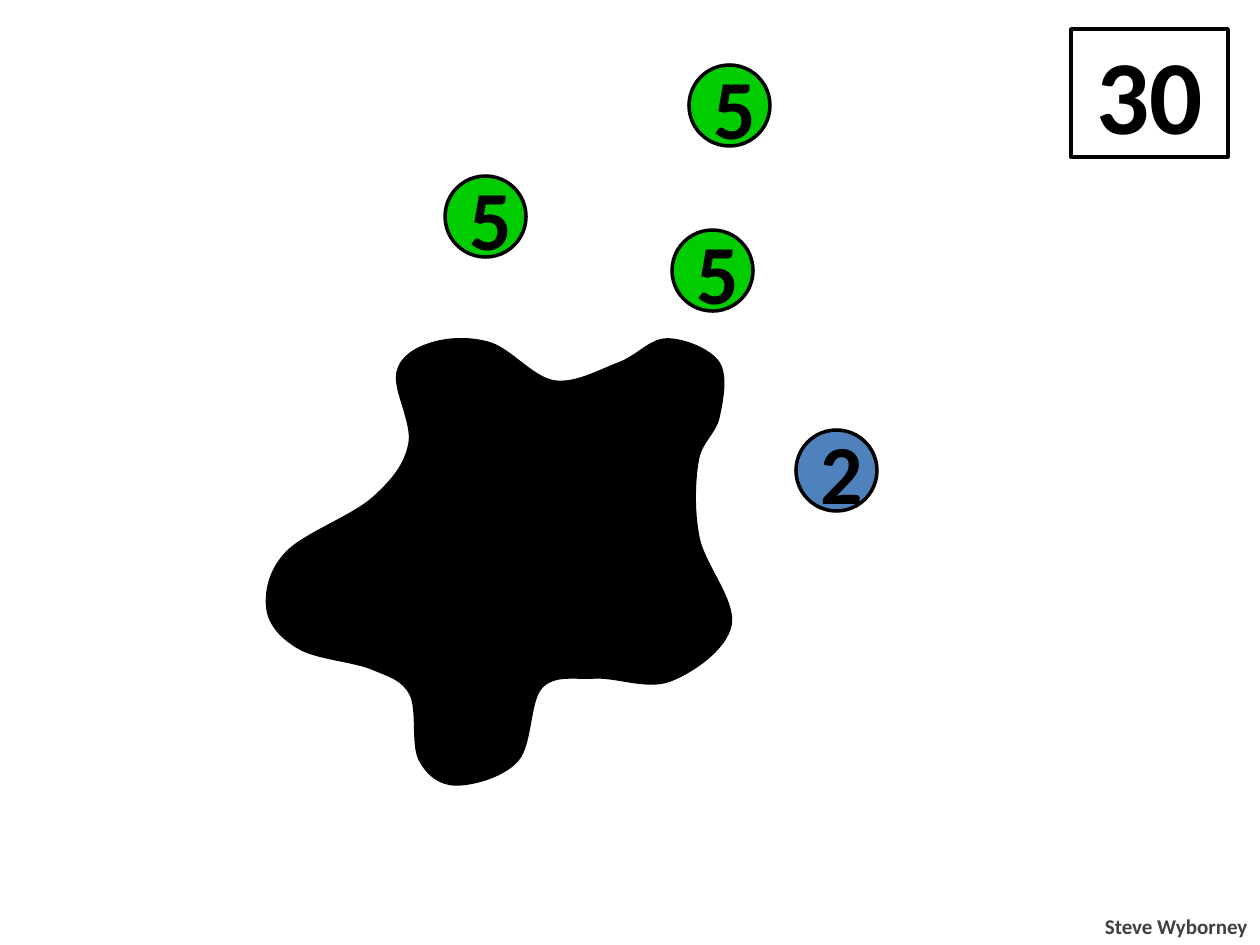
from typing import NamedTuple

from lxml import etree
from pptx import Presentation
from pptx.dml.color import RGBColor
from pptx.enum.shapes import MSO_SHAPE
from pptx.enum.text import MSO_ANCHOR, MSO_AUTO_SIZE, PP_ALIGN
from pptx.oxml.ns import qn
from pptx.util import Pt

RECT, OVAL = MSO_SHAPE.RECTANGLE, MSO_SHAPE.OVAL
CENTER, RIGHT = PP_ALIGN.CENTER, PP_ALIGN.RIGHT
TOP, MIDDLE = MSO_ANCHOR.TOP, MSO_ANCHOR.MIDDLE
FIT, FIXED = MSO_AUTO_SIZE.SHAPE_TO_FIT_TEXT, MSO_AUTO_SIZE.NONE

BLACK = RGBColor(0x00, 0x00, 0x00)
WHITE = RGBColor(0xFF, 0xFF, 0xFF)
GRAY = RGBColor(0x40, 0x40, 0x40)
GREEN = RGBColor(0x00, 0xCC, 0x00)
BLUE = RGBColor(0x4F, 0x81, 0xBD)

FONT = "Calibri"
SCALE = 914400 / 126  # EMU in one px
DISC = 81


class Disc(NamedTuple):
    left: int
    top: int
    label: str
    fill: RGBColor


DISCS = [
    Disc(796, 430, "2", BLUE),
    Disc(689, 65, "5", GREEN),
    Disc(445, 176, "5", GREEN),
    Disc(672, 230, "5", GREEN),
]

# Points that the outline of the ink blot runs through
BLOT = [
    (300, 648), (268, 609), (287, 553), (373, 499), (410, 444), (398, 373),
    (432, 344), (490, 344), (554, 382), (619, 364), (667, 340), (718, 363),
    (718, 417), (697, 461), (698, 538), (730, 625), (670, 680), (595, 677),
    (541, 687), (517, 760), (456, 784), (420, 759), (411, 694), (372, 668),
]


def px(num: float) -> int:
    return round(num * SCALE)


def write(shape, text: str, *, size: int, color: RGBColor = BLACK,
          align=CENTER, anchor=MIDDLE, wrap: bool = True, fit=FIXED) -> None:
    frame = shape.text_frame
    frame.word_wrap = wrap
    frame.auto_size = fit
    frame.vertical_anchor = anchor
    para = frame.paragraphs[0]
    para.alignment = align
    run = para.add_run()
    run.text = text
    font = run.font
    font.name, font.size, font.bold = FONT, Pt(size), True
    font.color.rgb = color


def paint(shape, fill: RGBColor) -> None:
    shape.shadow.inherit = False
    shape.fill.solid()
    shape.fill.fore_color.rgb = fill
    shape.line.color.rgb = BLACK
    shape.line.width = Pt(2)


def draw(slide, kind, box: tuple[int, int, int, int], fill: RGBColor,
         text: str, size: int) -> None:
    shape = slide.shapes.add_shape(kind, *map(px, box))
    paint(shape, fill)
    write(shape, text, size=size)


def blot(slide, knots: list[tuple[int, int]]) -> None:
    """Draw a closed smooth outline through the knots."""
    dots = [(px(x), px(y)) for x, y in knots]
    pen = slide.shapes.build_freeform(*dots[0], scale=1.0)
    pen.add_line_segments(dots[1:] + dots[:1], close=True)
    shape = pen.convert_to_shape()
    paint(shape, BLACK)

    # Bend each straight side; handles follow the neighbouring knots
    for i, side in enumerate(list(shape.element.iter(qn("a:lnTo")))):
        a, b, c, d = (dots[(i + k) % len(dots)] for k in (-1, 0, 1, 2))
        out = [q + (r - p) / 6 for p, q, r in zip(a, b, c)]
        back = [q - (r - p) / 6 for p, q, r in zip(b, c, d)]
        bend = etree.Element(qn("a:cubicBezTo"))
        for x, y in (out, back, c):
            etree.SubElement(bend, qn("a:pt"), x=str(round(x - shape.left)),
                             y=str(round(y - shape.top)))
        side.getparent().replace(side, bend)


def main() -> None:
    deck = Presentation()
    deck.slide_width, deck.slide_height = px(1260), px(945)
    slide = deck.slides.add_slide(deck.slide_layouts[6])

    # Total
    draw(slide, RECT, (1071, 29, 157, 128), WHITE, "30", 60)

    # Author
    name = slide.shapes.add_textbox(*map(px, (1091, 907, 169, 38)))
    write(name, "Steve Wyborney", size=12, color=GRAY, align=RIGHT,
          anchor=TOP, wrap=False, fit=FIT)

    # Discs in view
    for disc in DISCS:
        draw(slide, OVAL, (disc.left, disc.top, DISC, DISC), disc.fill,
             disc.label, 48)

    # Ink blot
    blot(slide, BLOT)

    deck.save("out.pptx")


if __name__ == "__main__":
    main()
